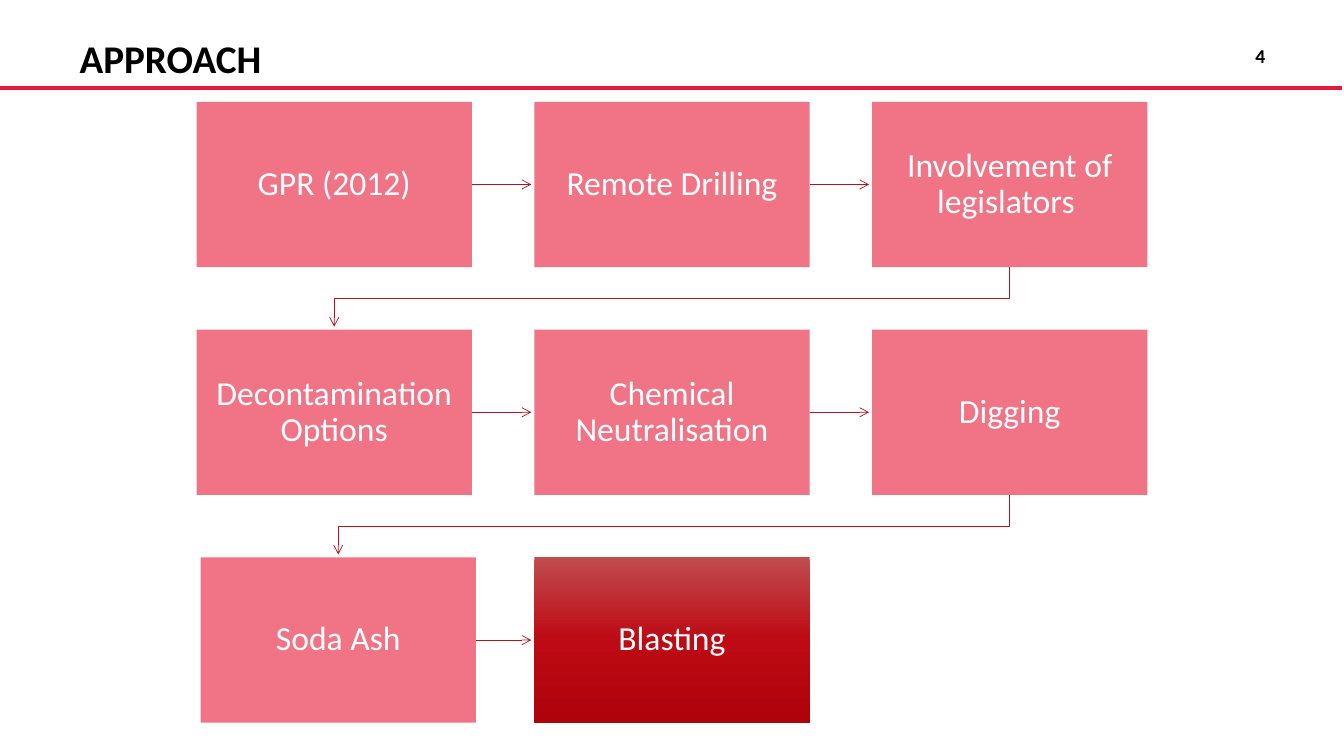
from copy import deepcopy
from dataclasses import dataclass

from lxml.etree import SubElement
from pptx import Presentation
from pptx.dml.color import RGBColor
from pptx.enum.shapes import MSO_CONNECTOR as Connector, MSO_SHAPE as Preset
from pptx.enum.text import MSO_ANCHOR as Anchor, PP_ALIGN as Align
from pptx.oxml.ns import qn
from pptx.util import Inches, Pt


@dataclass(frozen=True)
class Theme:
    font: str = "Calibri"
    ink: str = "000000"
    light: str = "FFFFFF"
    rule: str = "E31937"
    step: str = "F07486"
    arrow: str = "B5121B"
    final: tuple = ((0, "C04C4E"), (0.5, "BD0A14"), (1, "AF020B"))
    title_size: int = 28
    number_size: int = 14
    step_size: int = 24


class ApproachSlide:
    def __init__(self, slide, theme):
        self.shapes = slide.shapes
        self.theme = theme

    def set_text(self, frame, text, size, color, align, anchor, inset=0, bold=False, spacing=None):
        frame.word_wrap = True
        frame.vertical_anchor = anchor
        frame.margin_left = frame.margin_right = Inches(inset)
        frame.margin_top = frame.margin_bottom = Inches(inset)
        paragraph = frame.paragraphs[0]
        paragraph.text = text
        paragraph.alignment = align
        paragraph.line_spacing = spacing
        font = paragraph.font
        font.name = self.theme.font
        font.size = Pt(size)
        font.bold = bold
        font.color.rgb = RGBColor.from_string(color)

    def heading(self, text, box, size, align, anchor, spacing=None):
        label = self.shapes.add_textbox(*map(Inches, box))
        self.set_text(label.text_frame, text, size, self.theme.ink, align, anchor,
                      bold=True, spacing=spacing)

    def step(self, text, box, is_final):
        tile = self.shapes.add_shape(Preset.RECTANGLE, *map(Inches, box))
        tile.shadow.inherit = False
        tile.line.fill.background()
        if is_final:
            self.blend(tile.fill, tile.element.spPr)
        else:
            tile.fill.solid()
            tile.fill.fore_color.rgb = RGBColor.from_string(self.theme.step)
        self.set_text(tile.text_frame, text, self.theme.step_size, self.theme.light,
                      Align.CENTER, Anchor.MIDDLE, inset=0.19, spacing=0.9)

    def blend(self, fill, properties):
        fill.gradient()
        fill.gradient_angle = 270
        stops = properties.find(".//" + qn("a:gsLst"))
        stops.insert(1, deepcopy(stops[0]))
        for stop, (position, color) in zip(fill.gradient_stops, self.theme.final):
            stop.position = position
            stop.color.rgb = RGBColor.from_string(color)

    def stroke(self, route, color, width, arrowhead):
        route.line.color.rgb = RGBColor.from_string(color)
        route.line.width = Pt(width)
        if arrowhead:
            outline = route.element.spPr.find(qn("a:ln"))
            SubElement(outline, qn("a:tailEnd"), type="arrow")

    def straight(self, start, end, color, width, arrowhead=True):
        route = self.shapes.add_connector(Connector.STRAIGHT, *map(Inches, start + end))
        self.stroke(route, color, width, arrowhead)
        SubElement(route.element.spPr, qn("a:effectLst"))

    def bent(self, points, color, width):
        start, *rest = [tuple(map(Inches, point)) for point in points]
        builder = self.shapes.build_freeform(*start)
        builder.add_line_segments(rest, close=False)
        route = builder.convert_to_shape()
        route.shadow.inherit = False
        route.fill.background()
        self.stroke(route, color, width, True)


STEPS = [
    ["GPR (2012)", "Remote Drilling", "Involvement of legislators "],
    ["Decontamination Options", "Chemical Neutralisation", "Digging"],
    ["Soda Ash", "Blasting"],
]
LEFT, TOP = 1.95, 1.01
WIDTH, HEIGHT = 2.73, 1.64
COLUMN_PITCH, ROW_PITCH = 3.35, 2.26
SODA_ASH_SHIFT = 0.04
TIP_GAP = 0.03
ARROW_WIDTH = 0.5


def step_left(row, column):
    shift = SODA_ASH_SHIFT if (row, column) == (2, 0) else 0
    return LEFT + column * COLUMN_PITCH + shift


def main():
    deck = Presentation()
    deck.slide_width, deck.slide_height = Inches(13.33), Inches(7.5)
    theme = Theme()
    approach = ApproachSlide(deck.slides.add_slide(deck.slide_layouts[6]), theme)

    approach.straight((0, 0.87), (13.31, 0.87), theme.rule, 3, arrowhead=False)
    approach.heading("APPROACH", (0.79, 0.39, 10.97, 0.47), theme.title_size,
                     Align.LEFT, Anchor.TOP, spacing=0.9)
    approach.heading("4", (11.76, 0.39, 0.79, 0.28), theme.number_size,
                     Align.RIGHT, Anchor.BOTTOM)

    for row, names in enumerate(STEPS):
        top = TOP + row * ROW_PITCH
        middle = top + HEIGHT / 2
        for column, name in enumerate(names):
            left = step_left(row, column)
            approach.step(name, (left, top, WIDTH, HEIGHT), name == "Blasting")
            if column:
                approach.straight((step_left(row, column - 1) + WIDTH, middle),
                                  (left - TIP_GAP, middle), theme.arrow, ARROW_WIDTH)
        if row:
            source = step_left(row - 1, 2) + WIDTH / 2
            target = step_left(row, 0) + WIDTH / 2
            bottom = top - ROW_PITCH + HEIGHT
            bend = (bottom + top) / 2
            approach.bent([(source, bottom), (source, bend), (target, bend),
                           (target, top - TIP_GAP)], theme.arrow, ARROW_WIDTH)

    deck.save("out.pptx")


if __name__ == "__main__":
    main()
